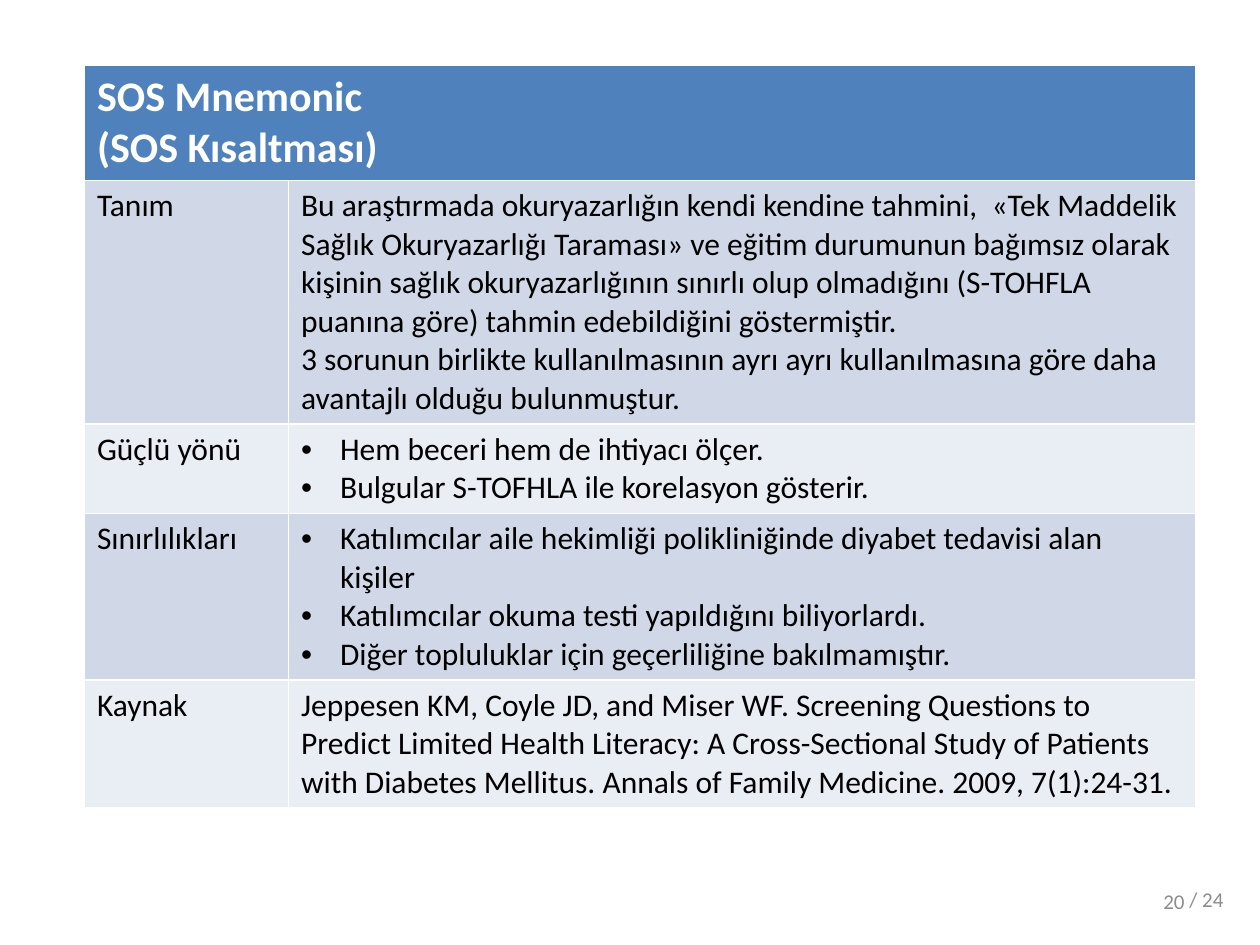
import pptx
import pptx.util
import pptx.dml.color
import pptx.enum.text
import lxml.etree
from pptx.util import Inches

RGBColor = pptx.dml.color.RGBColor
ALIGN = pptx.enum.text.PP_ALIGN
WHITE = RGBColor(0xFF, 0xFF, 0xFF)
BLACK = RGBColor(0, 0, 0)
GRAY = RGBColor(0x8C, 0x8C, 0x8C)
BLUE = RGBColor(0x4F, 0x81, 0xBD)
BANDS = [RGBColor(0xD0, 0xD8, 0xE8), RGBColor(0xE9, 0xED, 0xF4)]
NS = "{http://schemas.openxmlformats.org/drawingml/2006/main}"


def write(frame, lines, size=18, color=BLACK, bold=False, align=ALIGN.LEFT, bullet=False):
    for i, line in enumerate(lines):
        para = frame.add_paragraph() if i else frame.paragraphs[0]
        para.alignment = align
        run = para.add_run()
        run.text = line
        run.font.name = "Calibri"
        run.font.size = pptx.util.Pt(size)
        run.font.bold = bold
        run.font.color.rgb = color
        if bullet:
            props = para._p.get_or_add_pPr()
            props.set("marL", str(Inches(0.31)))
            props.set("indent", str(-Inches(0.31)))
            lxml.etree.SubElement(props, NS + "buFont", typeface="Arial")
            lxml.etree.SubElement(props, NS + "buChar", char="•")


# label, lines, bulleted, row height
ROWS = [
    ("Tanım", [
        "Bu araştırmada okuryazarlığın kendi kendine tahmini,  «Tek Maddelik Sağlık "
        "Okuryazarlığı Taraması» ve eğitim durumunun bağımsız olarak kişinin sağlık "
        "okuryazarlığının sınırlı olup olmadığını (S-TOHFLA puanına göre) tahmin "
        "edebildiğini göstermiştir.",
        "3 sorunun birlikte kullanılmasının ayrı ayrı kullanılmasına göre daha "
        "avantajlı olduğu bulunmuştur."], False, 1.93),
    ("Güçlü yönü", [
        "Hem beceri hem de ihtiyacı ölçer.",
        "Bulgular S-TOFHLA ile korelasyon gösterir."], True, 0.71),
    ("Sınırlılıkları", [
        "Katılımcılar aile hekimliği polikliniğinde diyabet tedavisi alan kişiler",
        "Katılımcılar okuma testi yapıldığını biliyorlardı.",
        "Diğer topluluklar için geçerliliğine bakılmamıştır."], True, 1.32),
    ("Kaynak", [
        "Jeppesen KM, Coyle JD, and Miser WF. Screening Questions to Predict Limited "
        "Health Literacy: A Cross-Sectional Study of Patients with Diabetes Mellitus. "
        "Annals of Family Medicine. 2009, 7(1):24-31."], False, 1.01),
]

deck = pptx.Presentation()
deck.slide_width, deck.slide_height = Inches(10), Inches(7.5)
slide = deck.slides.add_slide(deck.slide_layouts[6])

table = slide.shapes.add_table(
    len(ROWS) + 1, 2, Inches(0.67), Inches(0.52), Inches(8.82), Inches(5.88)).table
table.columns[0].width = Inches(1.62)
table.columns[1].width = Inches(7.2)

head = table.cell(0, 0)
head.merge(table.cell(0, 1))
table.rows[0].height = Inches(0.9)
head.fill.solid()
head.fill.fore_color.rgb = BLUE
write(head.text_frame, ["SOS Mnemonic", "(SOS Kısaltması)"], size=24, color=WHITE, bold=True)

for r, (label, lines, bullet, height) in enumerate(ROWS, 1):
    table.rows[r].height = Inches(height)
    for cell in table.rows[r].cells:
        cell.fill.solid()
        cell.fill.fore_color.rgb = BANDS[(r - 1) % 2]
    write(table.cell(r, 0).text_frame, [label])
    write(table.cell(r, 1).text_frame, lines, bullet=bullet)

for text, align, left, top, width, height in [
    ("/ 24", ALIGN.CENTER, 9.25, 6.9, 0.65, 0.47),
    ("20", ALIGN.RIGHT, 7.17, 6.95, 2.33, 0.4),
]:
    box = slide.shapes.add_textbox(Inches(left), Inches(top), Inches(width), Inches(height))
    frame = box.text_frame
    frame.word_wrap = True
    frame.vertical_anchor = pptx.enum.text.MSO_ANCHOR.MIDDLE
    write(frame, [text], size=12, color=GRAY, align=align)

deck.save("out.pptx")
